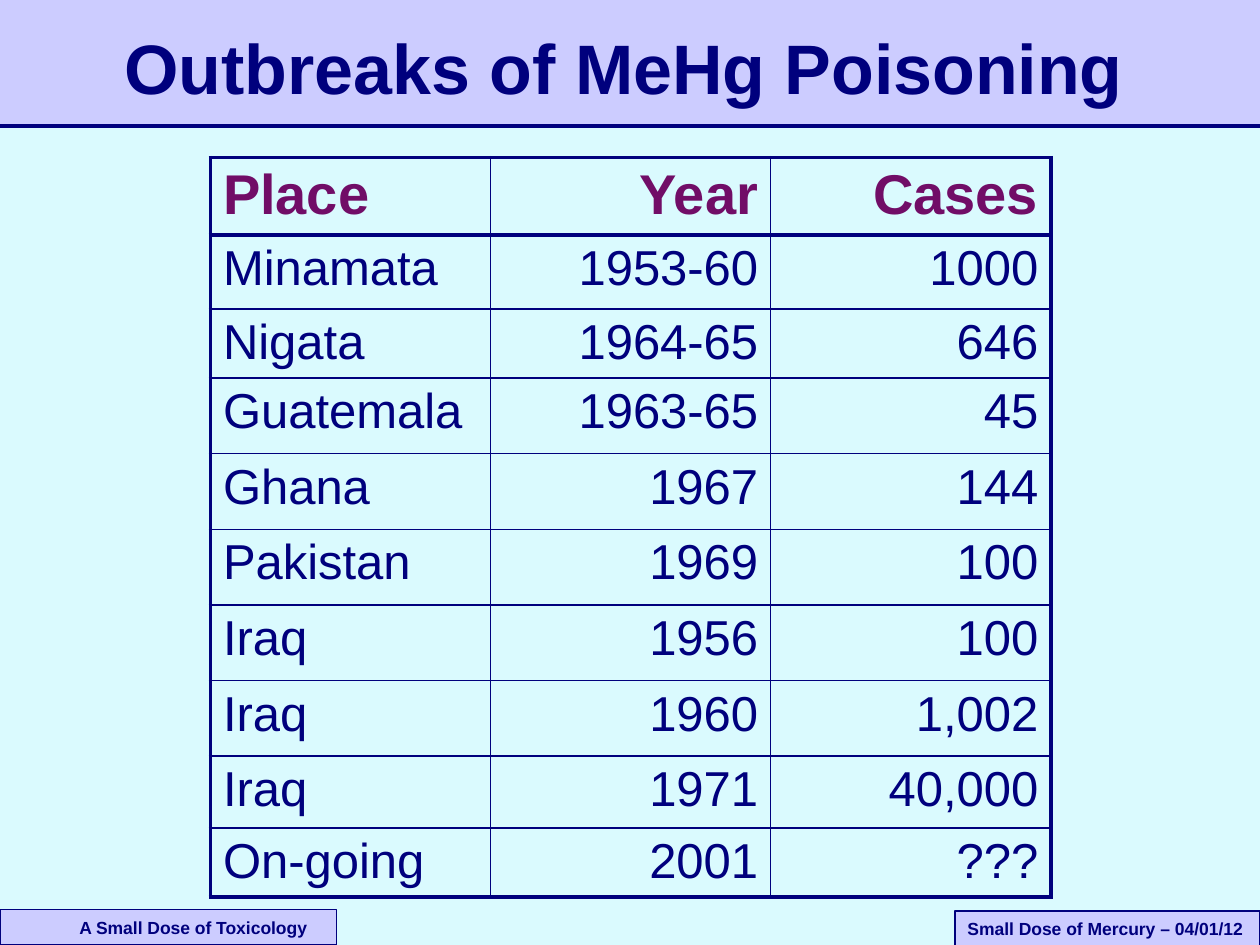
import pptx
import pptx.dml.color
import pptx.enum.shapes
import pptx.enum.text
import pptx.oxml.ns
import pptx.util
from lxml import etree

COLORS = {"background": "DAFAFE", "band": "CCCCFF", "navy": "00007D", "plum": "710D67"}
OUTBREAKS = [
    ("Place", "Year", "Cases"),
    ("Minamata", "1953-60", "1000"),
    ("Nigata", "1964-65", "646"),
    ("Guatemala", "1963-65", "45"),
    ("Ghana", "1967", "144"),
    ("Pakistan", "1969", "100"),
    ("Iraq", "1956", "100"),
    ("Iraq", "1960", "1,002"),
    ("Iraq", "1971", "40,000"),
    ("On-going", "2001", "???"),
]
ROW_HEIGHTS = [6, 5.9, 5.3, 6, 6, 6, 6, 6, 5.7, 5.3]
ALIGN = pptx.enum.text.PP_ALIGN


def rgb(name):
    return pptx.dml.color.RGBColor.from_string(COLORS[name])


class Deck:
    """Holds the style and the current slide, measured on a grid of 100 columns by 75 rows."""

    font = "Arial"

    def __init__(self):
        self.prs = pptx.Presentation()
        self.prs.slide_width = pptx.util.Inches(10)
        self.prs.slide_height = pptx.util.Inches(7.5)
        self.s = self.prs.slides.add_slide(self.prs.slide_layouts[6])
        self.s.background.fill.solid()
        self.s.background.fill.fore_color.rgb = rgb("background")

    def x(self, columns):
        return round(self.prs.slide_width * columns / 100)

    def y(self, rows):
        return round(self.prs.slide_height * rows / 75)

    def area(self, left, top, width, height):
        return self.x(left), self.y(top), self.x(width), self.y(height)

    def label(self, tf, text, size, color="navy", bold=True, align=ALIGN.LEFT):
        p = tf.paragraphs[0]
        p.text = text
        p.alignment = align
        p.font.name = self.font
        p.font.size = pptx.util.Pt(size)
        p.font.bold = bold
        p.font.color.rgb = rgb(color)

    def rect(self, *area, outline=None):
        sp = self.s.shapes.add_shape(pptx.enum.shapes.MSO_SHAPE.RECTANGLE, *self.area(*area))
        sp.shadow.inherit = False
        sp.fill.solid()
        sp.fill.fore_color.rgb = rgb("band")
        if outline:
            sp.line.color.rgb = rgb("navy")
            sp.line.width = pptx.util.Pt(outline)
        else:
            sp.line.fill.background()
        return sp

    def footer(self, text, *area, indent=1):
        tf = self.rect(*area, outline=0.75).text_frame
        tf.word_wrap = True
        tf.margin_left, tf.margin_right = self.x(indent), 0
        self.label(tf, text, 10)

    def title(self, text, *area):
        tf = self.s.shapes.add_textbox(*self.area(*area)).text_frame
        tf.word_wrap = True
        tf.vertical_anchor = pptx.enum.text.MSO_ANCHOR.MIDDLE
        self.label(tf, text, 40, align=ALIGN.CENTER)

    def rule(self, row):
        line = self.s.shapes.add_connector(
            pptx.enum.shapes.MSO_CONNECTOR.STRAIGHT, 0, self.y(row), self.x(100), self.y(row))
        line.line.color.rgb = rgb("navy")
        line.line.width = pptx.util.Pt(2)
        etree.SubElement(line._element.spPr, pptx.oxml.ns.qn("a:effectLst"))

    def border(self, cell, **widths):
        qn = pptx.oxml.ns.qn
        tc_pr = cell._tc.get_or_add_tcPr()
        for side, width in widths.items():
            ln = etree.SubElement(tc_pr, qn(f"a:ln{side}"), w=str(pptx.util.Pt(width)))
            fill = etree.SubElement(ln, qn("a:solidFill"))
            etree.SubElement(fill, qn("a:srgbClr"), val=COLORS["navy"])

    def table(self, rows, heights, left, top, width):
        last_row, last_col = len(rows) - 1, len(rows[0]) - 1
        table = self.s.shapes.add_table(
            len(rows), len(rows[0]), *self.area(left, top, width, sum(heights))).table
        table.first_row = table.horz_banding = False
        for column in table.columns:
            column.width = self.x(width / len(rows[0]))
        edges = [2.25, 3] + [1] * (last_row - 1) + [2.25]
        sides = [2.25] + [1] * last_col + [2.25]
        for i, values in enumerate(rows):
            table.rows[i].height = self.y(heights[i])
            for j, value in enumerate(values):
                cell = table.cell(i, j)
                cell.margin_bottom = self.y(0.3)
                self.border(cell, L=sides[j], R=sides[j + 1], T=edges[i], B=edges[i + 1])
                cell.fill.background()
                self.label(cell.text_frame, value, 28 if i else 32, "navy" if i else "plum",
                           i == 0, ALIGN.RIGHT if j else ALIGN.LEFT)


def main():
    deck = Deck()
    deck.rect(0, 0, 100, 10)
    deck.rule(10)
    deck.footer("A Small Dose of Toxicology", 0, 72.2, 26.7, 2.8, indent=6.3)
    deck.footer("Small Dose of Mercury – 04/01/12", 75.8, 72.3, 24.2, 2.8)
    deck.title("Outbreaks of MeHg Poisoning", 7, 1.5, 85, 7.6)
    deck.table(OUTBREAKS, ROW_HEIGHTS, 16.7, 12.5, 66.7)
    deck.prs.save("out.pptx")


if __name__ == "__main__":
    main()
